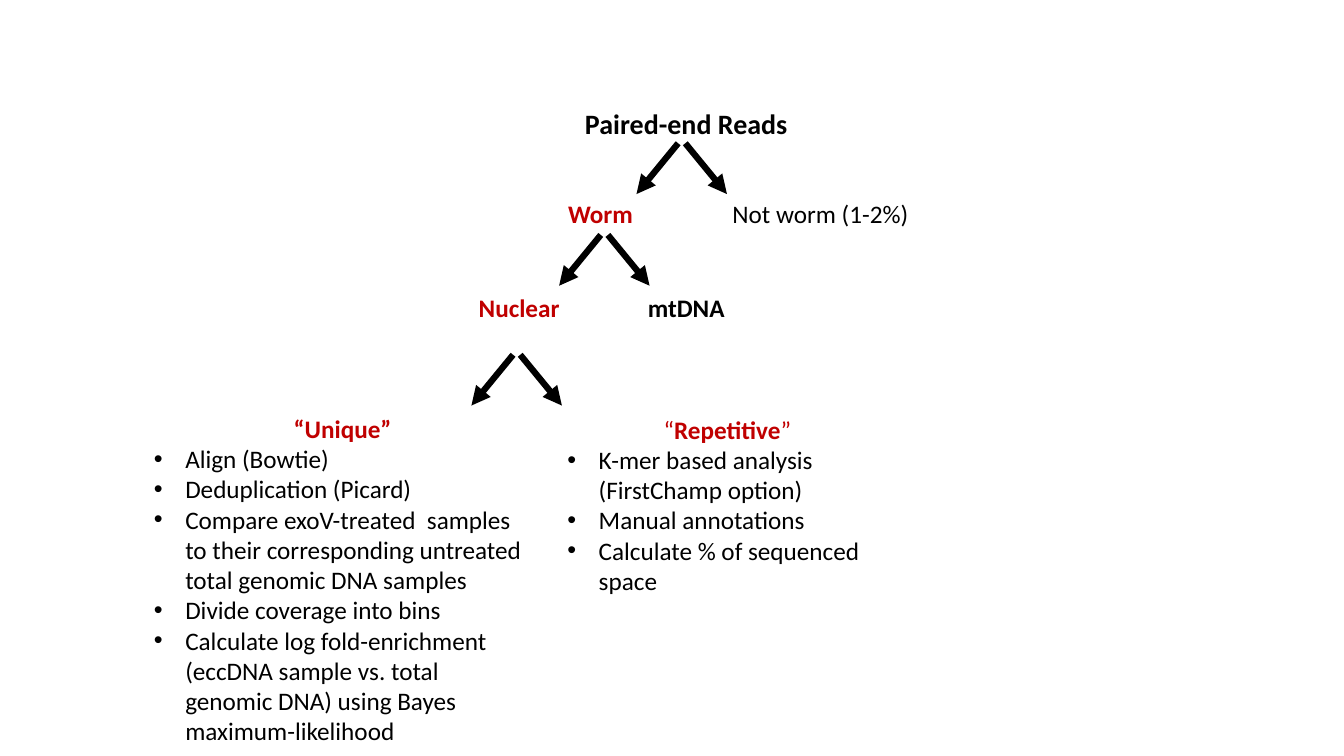
from lxml.etree import SubElement
from pptx import Presentation
from pptx.dml.color import RGBColor
from pptx.enum.shapes import MSO_CONNECTOR
from pptx.enum.text import MSO_AUTO_SIZE, PP_ALIGN
from pptx.oxml.ns import qn
from pptx.util import Cm, Pt

BLACK = RGBColor(0x00, 0x00, 0x00)
RED = RGBColor(0xC0, 0x00, 0x00)
WHITE = RGBColor(0xFF, 0xFF, 0xFF)


class ReadTree:
    font = "Calibri"
    size = 18
    label_width = 6.35
    label_height = 1.02
    arrow_width = 4.5
    indent = 0.79

    def __init__(self, slide):
        self.s = slide
        fill = slide.background.fill
        fill.solid()
        fill.fore_color.rgb = WHITE

    def style(self, r, color, bold, size):
        r.font.name = self.font
        r.font.size = Pt(size)
        r.font.bold = bold
        r.font.color.rgb = color

    def box(self, x, y, w, h):
        sp = self.s.shapes.add_textbox(Cm(x), Cm(y), Cm(w), Cm(h))
        tf = sp.text_frame
        tf.word_wrap = True
        tf.auto_size = MSO_AUTO_SIZE.SHAPE_TO_FIT_TEXT
        return tf

    def heading(self, tf, parts, color, size):
        p = tf.paragraphs[0]
        p.alignment = PP_ALIGN.CENTER
        for text, bold in parts:
            r = p.add_run()
            r.text = text
            self.style(r, color, bold, size)

    def label(self, x, y, text, color=BLACK, bold=True, size=size, h=label_height):
        tf = self.box(x, y, self.label_width, h)
        self.heading(tf, [(text, bold)], color, size)

    def bullet(self, tf, text):
        p = tf.add_paragraph()
        p.text = text
        pPr = p._p.get_or_add_pPr()
        pPr.set("marL", str(Cm(self.indent)))
        pPr.set("indent", str(-Cm(self.indent)))
        SubElement(pPr, qn("a:buFont")).set("typeface", "Arial")
        SubElement(pPr, qn("a:buChar")).set("char", "•")
        self.style(p.runs[0], BLACK, False, self.size)

    def branch(self, x, y, w, h, parts, steps):
        tf = self.box(x, y, w, h)
        self.heading(tf, parts, RED, self.size)
        for step in steps:
            self.bullet(tf, step)

    def arrow(self, x1, y1, x2, y2):
        c = self.s.shapes.add_connector(
            MSO_CONNECTOR.STRAIGHT, Cm(x1), Cm(y1), Cm(x2), Cm(y2))
        c.line.color.rgb = BLACK
        c.line.width = Pt(self.arrow_width)
        spPr = c._element.spPr
        SubElement(spPr.find(qn("a:ln")), qn("a:tailEnd")).set("type", "triangle")
        SubElement(spPr, qn("a:effectLst"))

    def fork(self, x, y, gap=0.09, reach=1.14, drop=1.28):
        for side in (-1, 1):
            self.arrow(x + side * gap, y, x + side * reach, y + drop)


def main():
    prs = Presentation()
    prs.slide_width, prs.slide_height = Cm(33.87), Cm(19.05)
    tree = ReadTree(prs.slides.add_slide(prs.slide_layouts[6]))

    tree.label(14.12, 2.57, "Paired-end Reads", size=20, h=1.12)
    tree.fork(17.18, 3.61)
    tree.label(11.96, 4.88, "Worm", RED)
    tree.label(17.5, 4.88, "Not worm (1-2%)", bold=False)
    tree.fork(15.23, 5.92)
    tree.label(9.91, 7.24, "Nuclear", RED)
    tree.label(14.12, 7.24, "mtDNA")
    tree.fork(13.02, 8.94)

    tree.branch(3.63, 10.29, 10.01, 8.71, [("“Unique”", True)], [
        "Align (Bowtie)",
        "Deduplication (Picard)",
        "Compare exoV-treated  samples to their corresponding untreated "
        "total genomic DNA samples",
        "Divide coverage into bins",
        "Calculate log fold-enrichment (eccDNA sample vs. total genomic DNA) "
        "using Bayes maximum-likelihood",
    ])
    tree.branch(14.05, 10.31, 8.56, 4.88,
                [("“", False), ("Repetitive", True), ("”", False)], [
        "K-mer based analysis (FirstChamp option)",
        "Manual annotations",
        "Calculate % of sequenced space",
    ])

    prs.save("out.pptx")


if __name__ == "__main__":
    main()
